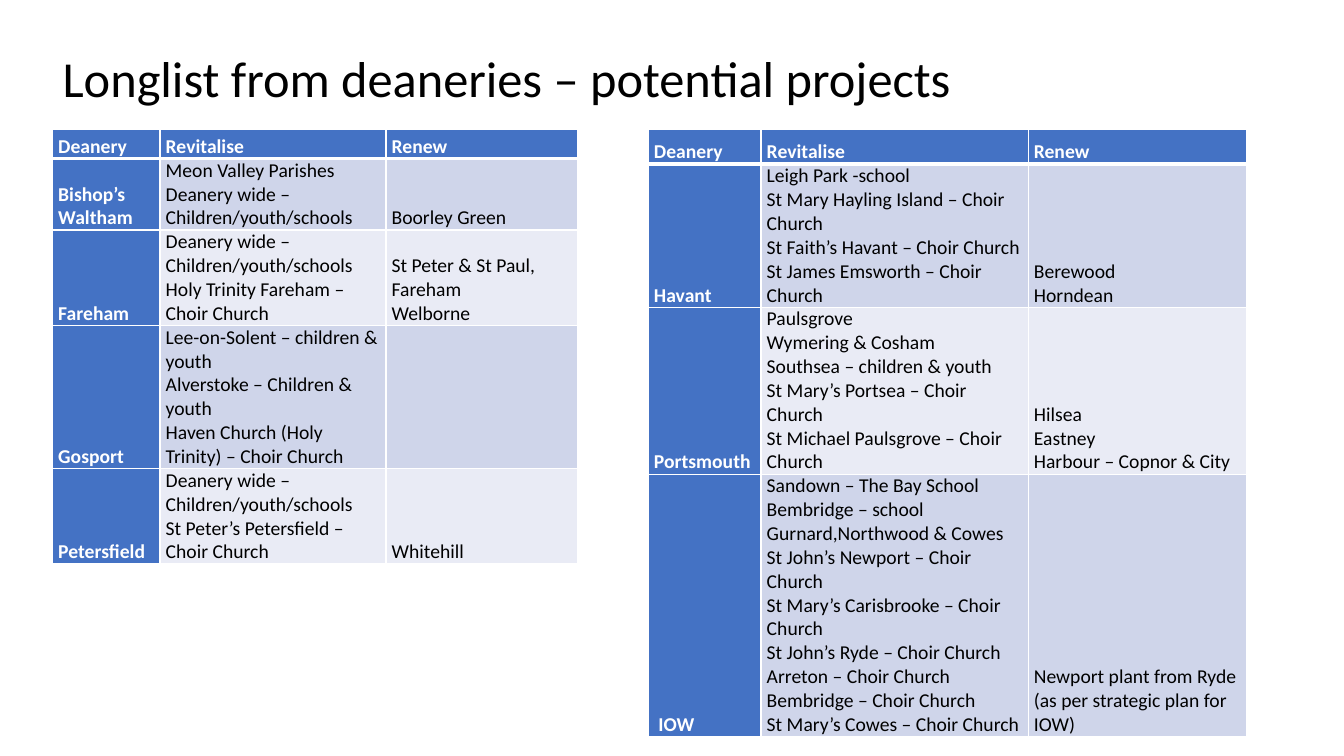
from dataclasses import dataclass

from lxml.etree import SubElement
from pptx import Presentation
from pptx.dml.color import RGBColor
from pptx.enum.text import MSO_ANCHOR, PP_ALIGN
from pptx.oxml.ns import qn
from pptx.util import Pt


@dataclass(frozen=True)
class Theme:
    font: str = "Calibri"
    title_size: int = 36
    table_size: int = 14
    black: str = "000000"
    white: str = "FFFFFF"
    accent: str = "4472C4"
    bands: tuple = ("CFD5EA", "E9EBF5")
    line: int = 1
    header_line: int = 3


THEME = Theme()
TITLE = "Longlist from deaneries – potential projects"
HEADER = (["Deanery"], ["Revitalise"], ["Renew"])
CHILDREN = "Deanery wide – Children/youth/schools"

# Each body row: deanery, revitalise projects, renew projects
MAINLAND = [
    (["Bishop’s Waltham"], ["Meon Valley Parishes", CHILDREN], ["Boorley Green"]),
    (["Fareham"], [CHILDREN, "Holy Trinity Fareham – Choir Church"],
     ["St Peter & St Paul, Fareham", "Welborne"]),
    (["Gosport"],
     ["Lee-on-Solent – children & youth", "Alverstoke – Children & youth",
      "Haven Church (Holy Trinity) – Choir Church"], []),
    (["Petersfield"], [CHILDREN, "St Peter’s Petersfield – Choir Church"], ["Whitehill"]),
]
COAST = [
    (["Havant"],
     ["Leigh Park -school", "St Mary Hayling Island – Choir Church",
      "St Faith’s Havant – Choir Church", "St James Emsworth – Choir Church"],
     ["Berewood", "Horndean"]),
    (["Portsmouth"],
     ["Paulsgrove", "Wymering & Cosham", "Southsea – children & youth",
      "St Mary’s Portsea – Choir Church", "St Michael Paulsgrove – Choir Church"],
     ["Hilsea", "Eastney", "Harbour – Copnor & City"]),
    ([" IOW"],
     ["Sandown – The Bay School", "Bembridge – school", "Gurnard,Northwood & Cowes",
      "St John’s Newport – Choir Church", "St Mary’s Carisbrooke – Choir Church",
      "St John’s Ryde – Choir Church", "Arreton – Choir Church",
      "Bembridge – Choir Church", "St Mary’s Cowes – Choir Church"],
     ["Newport plant from Ryde (as per strategic plan for IOW)"]),
]

# Left edge, column widths, header height, text lines per body row, body rows
TABLES = [
    (37.5, (76.8, 161.4, 136.9), 21, (3, 4, 6, 4), MAINLAND),
    (463, (80.6, 190.8, 156.3), 25, (6, 7, 11), COAST),
]
TABLE_TOP = 92.2
LINE_HEIGHT = 17
SIDE_INSET = 4.1


def style_span(span, size, colour, bold=False):
    span.font.name = THEME.font
    span.font.size = Pt(size)
    span.font.bold = bold
    span.font.color.rgb = RGBColor.from_string(colour)


def add_borders(cell, top, bottom):
    """Draw white lines on all four sides, with top and bottom widths in points."""
    properties = cell._tc.get_or_add_tcPr()
    sides = (("L", THEME.line), ("R", THEME.line), ("T", top), ("B", bottom))
    for position, (side, width) in enumerate(sides):
        line = SubElement(properties, qn(f"a:ln{side}"), w=str(Pt(width)))
        fill = SubElement(line, qn("a:solidFill"))
        SubElement(fill, qn("a:srgbClr"), val=THEME.white)
        properties.insert(position, line)


def fill_cell(cell, lines, row, column):
    heading = row == 0 or column == 0
    background = THEME.accent if heading else THEME.bands[(row - 1) % 2]
    cell.fill.solid()
    cell.fill.fore_color.rgb = RGBColor.from_string(background)
    cell.vertical_anchor = MSO_ANCHOR.BOTTOM
    cell.margin_left = cell.margin_right = Pt(SIDE_INSET)
    cell.margin_top = cell.margin_bottom = 0
    add_borders(cell,
                top=THEME.header_line if row == 1 else THEME.line,
                bottom=THEME.header_line if row == 0 else THEME.line)
    cell.text_frame.text = "\n".join(lines)
    for para in cell.text_frame.paragraphs:
        for span in para.runs:
            style_span(span, THEME.table_size, THEME.white if heading else THEME.black, heading)


def add_deanery_table(page, left, widths, header_height, line_counts, body):
    rows = [HEADER, *body]
    heights = [header_height, *(count * LINE_HEIGHT for count in line_counts)]
    frame = page.shapes.add_table(len(rows), len(widths), Pt(left), Pt(TABLE_TOP),
                                  Pt(sum(widths)), Pt(sum(heights)))
    table = frame.table
    table.first_col = True
    for column, width in zip(table.columns, widths):
        column.width = Pt(width)
    for row, height in zip(table.rows, heights):
        row.height = Pt(height)
    for r, row in enumerate(rows):
        for c, lines in enumerate(row):
            fill_cell(table.cell(r, c), lines, r, c)


def add_title(page):
    box = page.shapes.title
    box.left, box.top, box.width, box.height = Pt(37.5), Pt(33), Pt(800.6), Pt(49.7)
    frame = box.text_frame
    frame.text = TITLE
    frame.word_wrap = True
    frame.vertical_anchor = MSO_ANCHOR.MIDDLE
    para = frame.paragraphs[0]
    para.alignment = PP_ALIGN.LEFT
    para.line_spacing = 0.9
    style_span(para.runs[0], THEME.title_size, THEME.black)


def main():
    deck = Presentation()
    deck.slide_width, deck.slide_height = Pt(960), Pt(540)
    page = deck.slides.add_slide(deck.slide_layouts.get_by_name("Title Only"))
    add_title(page)
    for table in TABLES:
        add_deanery_table(page, *table)
    deck.save("out.pptx")


if __name__ == "__main__":
    main()
